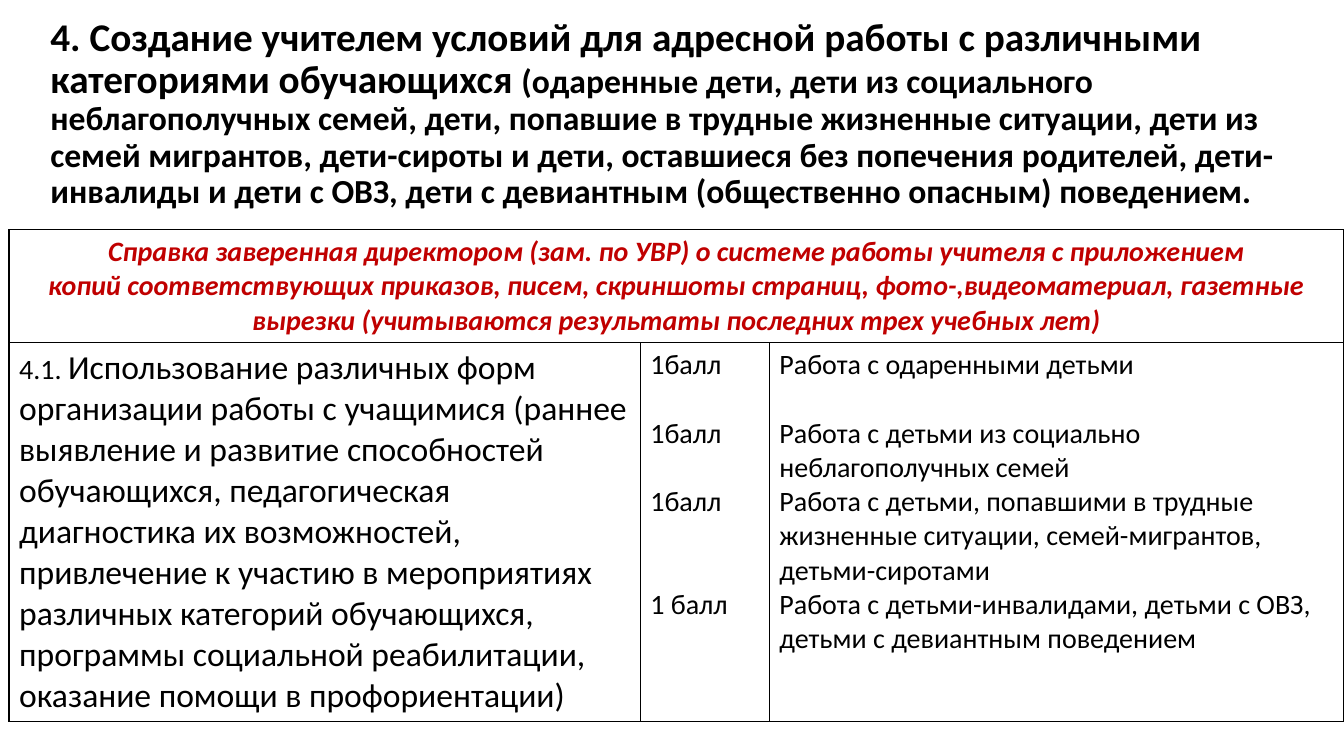
from lxml.etree import SubElement
from pptx import Presentation
from pptx.dml.color import RGBColor
from pptx.enum.text import MSO_ANCHOR, MSO_AUTO_SIZE, PP_ALIGN
from pptx.oxml import parse_xml
from pptx.oxml.ns import nsdecls, qn
from pptx.util import Inches, Pt

BLACK, RED = "000000", "C00000"
LINE_PT = 24.4
HEADING = [
    [("4. Создание учителем условий для адресной работы с различными", 28)],
    [("категориями обучающихся ", 28), ("(одаренные дети, дети из социального", 24)],
    [("неблагополучных семей, дети, попавшие в трудные жизненные ситуации, дети из "
      "семей мигрантов, дети-сироты и дети, оставшиеся без попечения родителей, "
      "дети-инвалиды и дети с ОВЗ, дети с девиантным (общественно опасным) поведением.", 24)],
]
EVIDENCE = [
    (0, [("Справка заверенная директором (зам. по УВР) о системе работы учителя с приложением", 20)]),
    (0, [("копий соответствующих приказов, писем, скриншоты страниц, фото-,видеоматериал, "
          "газетные вырезки (учитываются результаты последних трех учебных лет)", 20)]),
]
CRITERION = [
    (0, [("4.1. ", 20),
         ("Использование различных форм организации работы с учащимися (раннее выявление "
          "и развитие способностей обучающихся, педагогическая диагностика их "
          "возможностей, привлечение к участию в мероприятиях", 24)]),
    (0, [("различных категорий обучающихся, программы социальной реабилитации, "
          "оказание помощи в профориентации)", 24)]),
]
POINTS = [
    (0, [("1балл", 20)]),
    (1, [("1балл", 20)]),
    (1, [("1балл", 20)]),
    (2, [("1 балл", 20)]),
]
WORK = [
    (0, [("Работа с одаренными детьми", 20)]),
    (1, [("Работа с детьми из социально неблагополучных семей", 20)]),
    (0, [("Работа с детьми, попавшими в трудные жизненные ситуации, семей-мигрантов, "
          "детьми-сиротами", 20)]),
    (0, [("Работа с детьми-инвалидами, детьми с ОВЗ, детьми с девиантным поведением", 20)]),
]


def rgb(color):
    """Turn a hex string into a colour."""
    return RGBColor.from_string(color)


def add_runs(p, runs, color, **fmt):
    """Append (text, size) runs with one shared format."""
    for text, size in runs:
        r = p.add_run()
        r.text = text
        r.font.color.rgb = rgb(color)
        for name, value in {"name": "Calibri", "size": Pt(size), **fmt}.items():
            setattr(r.font, name, value)


def add_heading(s, left, top, width, height):
    """Fill the body placeholder with the criterion heading."""
    sp = s.placeholders[1]
    for name, value in zip(("left", "top", "width", "height"), (left, top, width, height)):
        setattr(sp, name, Inches(value))
    tf = sp.text_frame
    for name, value in {"word_wrap": True, "auto_size": MSO_AUTO_SIZE.NONE,
                        "vertical_anchor": MSO_ANCHOR.TOP}.items():
        setattr(tf, name, value)
    p = tf.paragraphs[0]
    pPr = p._p.get_or_add_pPr()
    pPr.set("marL", "0")
    pPr.set("indent", "0")
    SubElement(pPr, qn("a:buNone"))
    for name, value in {"line_spacing": 0.9, "space_before": Pt(0)}.items():
        setattr(p, name, value)
    for i, line in enumerate(HEADING):
        if i:
            p.add_line_break()
        add_runs(p, line, BLACK, bold=True)


def style_cell(cell):
    """Clear the fill and draw thin black borders."""
    cell.fill.background()
    tcPr = cell._tc.get_or_add_tcPr()
    for i, side in enumerate(("lnL", "lnR", "lnT", "lnB")):
        tcPr.insert(i, parse_xml(
            f'<a:{side} {nsdecls("a")} w="12700"><a:solidFill><a:srgbClr val="{BLACK}"/>'
            f'</a:solidFill></a:{side}>'))


def fill_cell(cell, paragraphs, color=BLACK, align=PP_ALIGN.LEFT, **fmt):
    """Write (lines skipped above, runs) paragraphs into a cell."""
    tf = cell.text_frame
    for i, (skipped, runs) in enumerate(paragraphs):
        p = tf.add_paragraph() if i else tf.paragraphs[0]
        for name, value in {"alignment": align, "space_before": Pt(skipped * LINE_PT)}.items():
            setattr(p, name, value)
        add_runs(p, runs, color, **fmt)


def add_criteria_table(s, left, top, width, height):
    """Place the evidence row above the criterion, points and work cells."""
    tbl = s.shapes.add_table(2, 3, *map(Inches, (left, top, width, height))).table
    head = 1.12
    for col, w in zip(tbl.columns, (6.26, 1.28, width - 7.54)):
        col.width = Inches(w)
    for row, h in zip(tbl.rows, (head, height - head)):
        row.height = Inches(h)
    for cell in tbl.iter_cells():
        style_cell(cell)
    tbl.cell(0, 0).merge(tbl.cell(0, 2))
    fill_cell(tbl.cell(0, 0), EVIDENCE, RED, PP_ALIGN.CENTER, bold=True, italic=True)
    for i, paragraphs in enumerate((CRITERION, POINTS, WORK)):
        fill_cell(tbl.cell(1, i), paragraphs, bold=False)


def main():
    """Build and save the slide."""
    prs = Presentation()
    prs.slide_width, prs.slide_height = Inches(13.33), Inches(7.5)
    s = prs.slides.add_slide(prs.slide_layouts[1])
    title = s.shapes.title._element
    title.getparent().remove(title)
    add_heading(s, 0.4, 0.12, 12.62, 4.76)
    add_criteria_table(s, 0.09, 2.28, 13.24, 4.87)
    prs.save("out.pptx")


if __name__ == "__main__":
    main()
